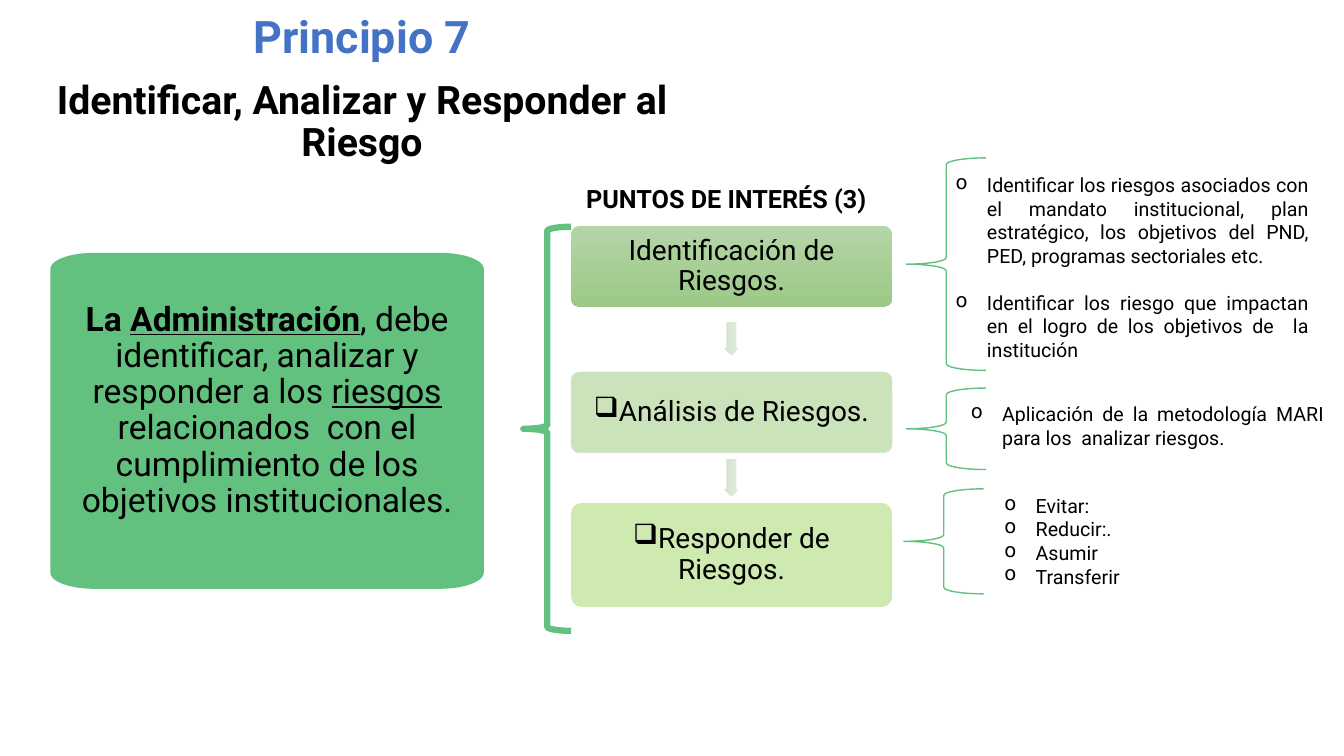
from math import cos, pi, sin

from lxml.etree import SubElement
from pptx import Presentation
from pptx.dml.color import RGBColor
from pptx.enum.shapes import MSO_SHAPE as Shape
from pptx.enum.text import MSO_ANCHOR as Anchor, PP_ALIGN as Align
from pptx.oxml.ns import qn
from pptx.util import Inches, Pt

COLUMNS, ROWS = 160, 90
CELL = Inches(7.5) / ROWS
GREEN, BLUE, BLACK = "63C180", "4472C4", "000000"


def color(code):
    return RGBColor.from_string(code)


def cells(*counts):
    return [round(count * CELL) for count in counts]


def set_alpha(fill, percent):
    """Make a solid colour partly opaque; fill is the parent of its a:solidFill."""
    tint = fill.find(qn("a:solidFill"))[0]
    SubElement(tint, qn("a:alpha"), val=str(percent * 1000))


def write(para, text, size=14, code=BLACK, bold=False, underline=False):
    span = para.add_run()
    span.text = text
    font = span.font
    font.name, font.size, font.bold, font.underline = "Roboto", Pt(size), bold, underline
    font.color.rgb = color(code)


def add_bullet(para, char, indent=0):
    props = para._p.get_or_add_pPr()
    props.set("marL", str(Inches(indent)))
    props.set("indent", str(-Inches(indent)))
    SubElement(props, qn("a:buChar"), char=char)


class Page:
    """The slide, measured in square grid cells, and its green style."""

    def __init__(self, deck):
        self.shapes = deck.slides.add_slide(deck.slide_layouts[6]).shapes

    def text_box(self, *place):
        frame = self.shapes.add_textbox(*cells(*place)).text_frame
        frame.word_wrap = True
        return frame

    def title(self, place, lines):
        frame = self.text_box(*place)
        for index, (text, size, code) in enumerate(lines):
            para = frame.add_paragraph() if index else frame.paragraphs[0]
            para.alignment, para.line_spacing = Align.CENTER, 0.9
            para.space_before = Pt(12 if index else 0)
            write(para, text, size=size, code=code, bold=True)

    def heading(self, place, text):
        write(self.text_box(*place).paragraphs[0], text, size=18, bold=True)

    def notes(self, place, items, gap=0):
        frame = self.text_box(*place)
        for index, text in enumerate(items):
            para = frame.add_paragraph() if index else frame.paragraphs[0]
            add_bullet(para, "o", 0.31)
            para.alignment = Align.JUSTIFY
            para.space_before = Pt(gap if index else 0)
            write(para, text)

    def centered(self, shape, margin):
        """Prepare the shape's text frame and return its only paragraph."""
        frame = shape.text_frame
        frame.word_wrap, frame.vertical_anchor = True, Anchor.MIDDLE
        frame.margin_left = frame.margin_right = Inches(margin)
        frame.margin_top = frame.margin_bottom = Inches(margin)
        para = frame.paragraphs[0]
        para.alignment, para.line_spacing = Align.CENTER, 0.9
        return para

    def preset(self, kind, place, adjustments=()):
        shape = self.shapes.add_shape(kind, *cells(*place))
        shape.shadow.inherit = False
        for index, value in enumerate(adjustments):
            shape.adjustments[index] = value
        shape.line.fill.background()
        return shape

    def gradient(self, shape, codes):
        shape.fill.gradient()
        shape.fill.gradient_angle = 270
        for stop, code in zip(shape.fill.gradient_stops, codes):
            stop.color.rgb = color(code)

    def brace(self, place, width=1):
        shape = self.preset(Shape.LEFT_BRACE, place)
        shape.fill.background()
        shape.line.color.rgb = color(GREEN)
        shape.line.width = Pt(width)

    def step(self, place, text, codes, bullet=None):
        shape = self.preset(Shape.ROUNDED_RECTANGLE, place, [0.1])
        if len(codes) > 1:
            self.gradient(shape, codes)
        else:
            shape.fill.solid()
            shape.fill.fore_color.rgb = color(codes[0])
        para = self.centered(shape, 0.05)
        if bullet:
            add_bullet(para, bullet)
        write(para, text, size=20)
        return shape

    def down_arrow(self, center_x, center_y, length, thickness=1.7):
        place = center_x - length / 2, center_y - thickness / 2, length, thickness
        shape = self.preset(Shape.RIGHT_ARROW, place, [0.67, 0.5])
        shape.rotation = 90
        self.gradient(shape, ["E1ECDD", "D2E3CB"])

    def panel(self, left, top, width, height, spans, corner=(5.2, 1.92), steps=10):
        """Draw a box with elliptical corners that holds the main statement."""
        radius_x, radius_y = corner
        near_x, far_x = left + radius_x, left + width - radius_x
        near_y, far_y = top + radius_y, top + height - radius_y
        centers = [(far_x, far_y), (near_x, far_y), (near_x, near_y), (far_x, near_y)]
        points = []
        for quarter, (x, y) in enumerate(centers):
            for index in range(steps + 1):
                angle = (quarter + index / steps) * pi / 2
                points.append(cells(x + radius_x * cos(angle), y + radius_y * sin(angle)))
        builder = self.shapes.build_freeform(*points[0])
        builder.add_line_segments(points[1:])
        shape = builder.convert_to_shape()
        shape.shadow.inherit = False
        shape.fill.solid()
        shape.fill.fore_color.rgb = color(GREEN)
        shape.line.fill.background()
        para = self.centered(shape, 0.07)
        shape.text_frame.margin_bottom = Inches(0.27)
        for text, look in spans:
            write(para, text, size=24, **look)


def main():
    deck = Presentation()
    deck.slide_width, deck.slide_height = cells(COLUMNS, ROWS)
    page = Page(deck)

    page.title((1.8, 1.2, 82.6, 19.4), [
        ("Principio 7", 32, BLUE),
        ("Identificar, Analizar y Responder al Riesgo", 28, BLACK),
    ])
    page.panel(6, 30.1, 51.6, 40, [
        ("La ", {"bold": True}),
        ("Administración", {"bold": True, "underline": True}),
        (", debe identificar, analizar y responder a los ", {}),
        ("riesgos ", {"underline": True}),
        ("relacionados  con el cumplimiento de los objetivos institucionales.", {}),
    ])
    page.brace((62.3, 27, 5.7, 48.1), width=4.5)
    page.heading((68.6, 21.2, 82.6, 4.8), "PUNTOS DE INTERÉS (3)")

    left, width = 68, 38.2
    page.step((left, 26.9, width, 9.6), "Identificación de Riesgos.", ["B5D5A7", "9CC987"])
    analysis = page.step((left, 44.3, width, 9.6), "Análisis de Riesgos.", ["C5E0B4"], "❑")
    analysis.line.color.rgb = color("D5E3CF")
    analysis.line.width = Pt(0.5)
    for fill in (analysis._element.spPr, analysis.line._ln):
        set_alpha(fill, 90)
    page.step((left, 59.9, width, 12.35), "Responder de Riesgos.", ["CEEAB0"], "❑")
    for center_y, length in ((40.3, 4), (56.9, 4.4)):
        page.down_arrow(left + width / 2, center_y, length)

    for place in ((107.9, 18.8, 9.5, 25.3), (107.9, 46.2, 9.5, 9.7), (107.6, 58.2, 9.5, 12.5)):
        page.brace(place)
    page.notes((112.6, 20, 44.4, 26.6), [
        "Identificar los riesgos asociados con el mandato institucional, plan estratégico, "
        "los objetivos del PND, PED, programas sectoriales etc.",
        "Identificar los riesgo que impactan en el logro de los objetivos de  la institución",
    ], gap=17)
    page.notes((114.4, 47.3, 44.4, 6.8),
               ["Aplicación de la metodología MARI para los  analizar riesgos."])
    page.notes((118.4, 58.2, 41.6, 12.5), ["Evitar:", "Reducir:.", "Asumir", "Transferir"])

    deck.save("out.pptx")


if __name__ == "__main__":
    main()
